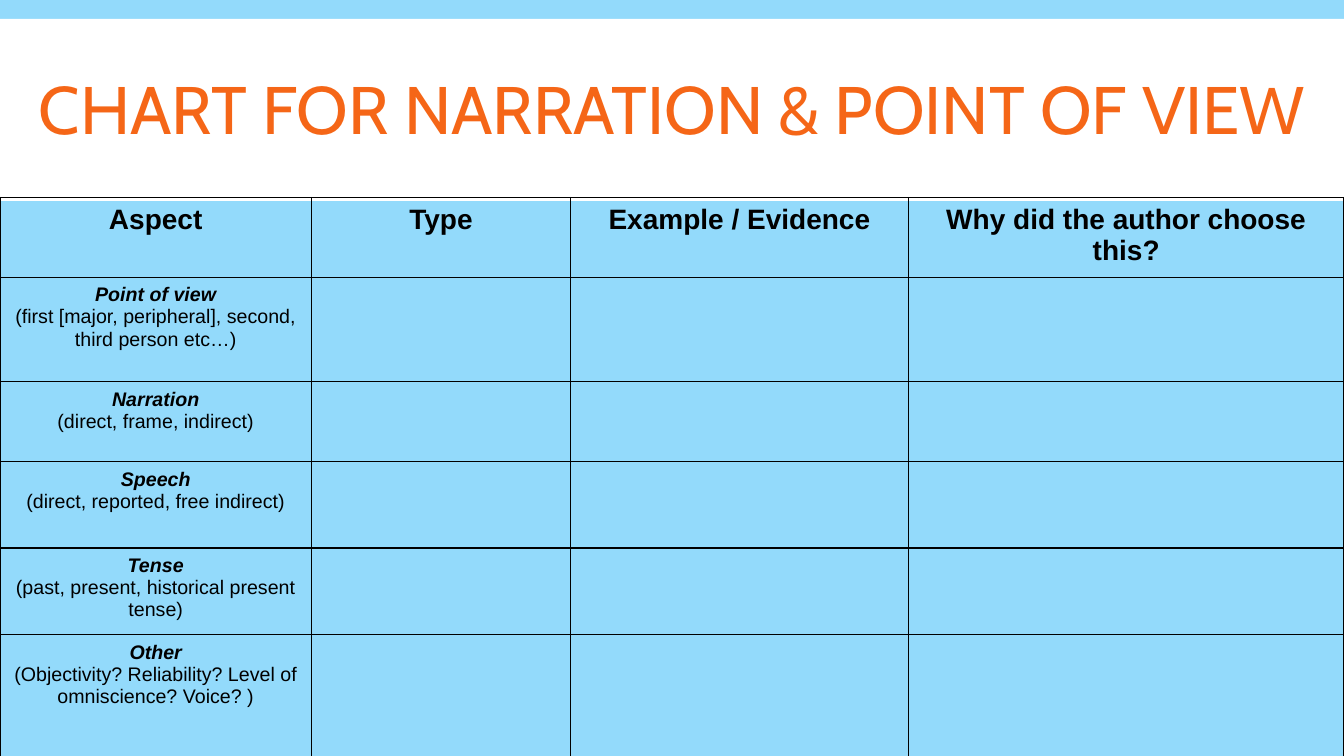
import pptx
import pptx.util
import pptx.dml.color
import pptx.enum.shapes
import pptx.enum.text
import pptx.oxml

Pt = pptx.util.Pt
RGBColor = pptx.dml.color.RGBColor
CENTER = pptx.enum.text.PP_ALIGN.CENTER

SKY = RGBColor(0x93, 0xDA, 0xFB)
WHITE = RGBColor(0xFF, 0xFF, 0xFF)
ORANGE = RGBColor(0xF5, 0x66, 0x17)
BLACK = RGBColor(0, 0, 0)

HEADINGS = ["Aspect", "Type", "Example / Evidence", "Why did the author choose this?"]
ASPECTS = [
    ("Point of view", "(first [major, peripheral], second, third person etc…)"),
    ("Narration", "(direct, frame, indirect)"),
    ("Speech", "(direct, reported, free indirect)"),
    ("Tense", "(past, present, historical present tense)"),
    ("Other", "(Objectivity? Reliability? Level of omniscience? Voice? )"),
]
COLUMN_WIDTHS = [222.5, 185, 241.5, 311]
ROW_HEIGHTS = [57, 74.5, 57, 62, 62, 87.5]


def add_run(paragraph, text, font_name, size, color, bold=False, italic=False):
    paragraph.alignment = CENTER
    run = paragraph.add_run()
    run.text = text
    run.font.name = font_name
    run.font.size = Pt(size)
    run.font.color.rgb = color
    run.font.bold = bold
    run.font.italic = italic


def format_cell(cell):
    cell.fill.background()
    cell.margin_left = cell.margin_right = Pt(5)
    cell.margin_top = cell.margin_bottom = Pt(5)
    properties = cell._tc.get_or_add_tcPr()
    for position, side in enumerate(["lnL", "lnR", "lnT", "lnB"]):
        border = pptx.oxml.parse_xml(
            f'<a:{side} xmlns:a="http://schemas.openxmlformats.org/drawingml/2006/main" '
            f'w="{Pt(1)}"><a:solidFill><a:srgbClr val="{BLACK}"/></a:solidFill></a:{side}>'
        )
        properties.insert(position, border)


presentation = pptx.Presentation()
presentation.slide_width = Pt(960)
presentation.slide_height = Pt(540)
slide = presentation.slides.add_slide(presentation.slide_layouts[5])
slide.background.fill.solid()
slide.background.fill.fore_color.rgb = SKY

title_band = slide.shapes.add_shape(
    pptx.enum.shapes.MSO_SHAPE.RECTANGLE, Pt(0), Pt(13.5), Pt(960), Pt(130)
)
title_band.shadow.inherit = False
title_band.fill.solid()
title_band.fill.fore_color.rgb = WHITE
title_band.line.fill.background()
slide.shapes._spTree.insert(2, title_band._element)

title = slide.shapes.title
title.left, title.top, title.width, title.height = Pt(0), Pt(22), Pt(960), Pt(119)
title.text_frame.word_wrap = True
title.text_frame.vertical_anchor = pptx.enum.text.MSO_ANCHOR.MIDDLE
title_paragraph = title.text_frame.paragraphs[0]
title_paragraph.line_spacing = 0.85
add_run(title_paragraph, "CHART FOR NARRATION & POINT OF VIEW", "Cabin", 48, ORANGE)

table = slide.shapes.add_table(
    len(ROW_HEIGHTS), len(COLUMN_WIDTHS), Pt(0), Pt(141), Pt(960), Pt(400)
).table
table.horz_banding = False
table.first_row = False
for column, width in zip(table.columns, COLUMN_WIDTHS):
    column.width = Pt(width)
for row, height in zip(table.rows, ROW_HEIGHTS):
    row.height = Pt(height)
for cell in table.iter_cells():
    format_cell(cell)

for index, heading in enumerate(HEADINGS):
    paragraph = table.cell(0, index).text_frame.paragraphs[0]
    add_run(paragraph, heading, "Arial", 20, BLACK, bold=True)

for index, (aspect, examples) in enumerate(ASPECTS, start=1):
    text_frame = table.cell(index, 0).text_frame
    add_run(text_frame.paragraphs[0], aspect, "Arial", 14, BLACK, bold=True, italic=True)
    add_run(text_frame.add_paragraph(), examples, "Arial", 14, BLACK)

presentation.save("out.pptx")
